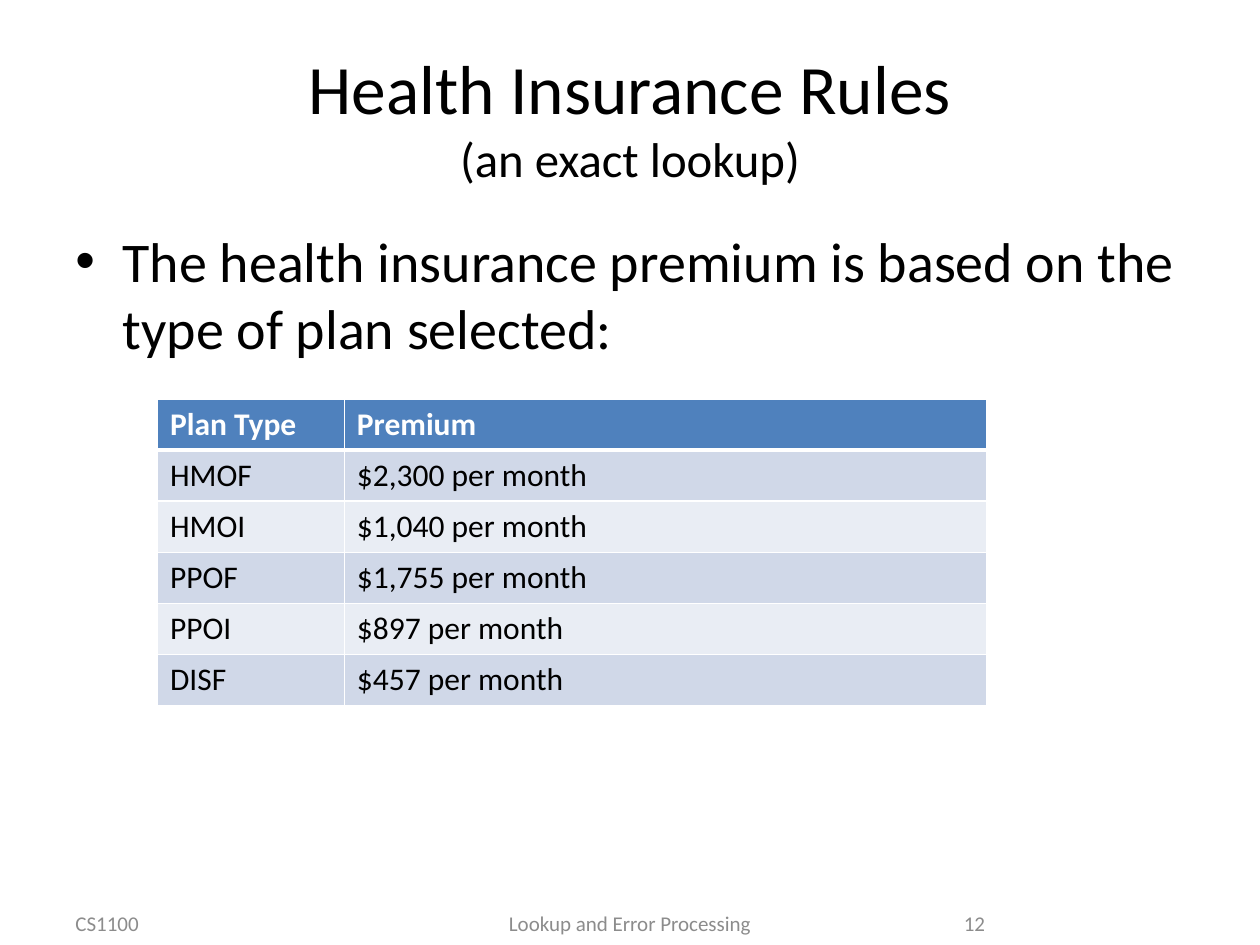
from pptx import Presentation
from pptx.dml.color import RGBColor
from pptx.enum.text import MSO_ANCHOR, PP_ALIGN
from pptx.oxml.ns import qn
from pptx.util import Pt
from lxml.etree import SubElement

BLACK, WHITE, GRAY, BLUE = "000000", "FFFFFF", "8C8C8C", "4F81BD"
BANDS = ("D0D8E8", "E9EDF4")
PLANS = [
    ("Plan Type", "Premium"),
    ("HMOF", "$2,300 per month"),
    ("HMOI", "$1,040 per month"),
    ("PPOF", "$1,755 per month"),
    ("PPOI", "$897 per month"),
    ("DISF", "$457 per month"),
]
FOOTER = [
    ("CS1100", 36, 168, PP_ALIGN.LEFT),
    ("Lookup and Error Processing", 246, 228, PP_ALIGN.CENTER),
    ("12", 516, 54, PP_ALIGN.RIGHT),
]


def color(code):
    """Turn a hex string into a colour."""
    return RGBColor.from_string(code)


def style(font, size, code, bold=False):
    """Set the font from a dict of format values."""
    for key, value in {"name": "Calibri", "size": Pt(size), "bold": bold}.items():
        setattr(font, key, value)
    font.color.rgb = color(code)


def add_text(slide, box, lines, code, align=PP_ALIGN.LEFT, anchor=MSO_ANCHOR.MIDDLE):
    """Add a text box of (text, size) lines and return its paragraph."""
    frame = slide.shapes.add_textbox(*map(Pt, box)).text_frame
    frame.word_wrap = True
    frame.vertical_anchor = anchor
    para = frame.paragraphs[0]
    para.alignment = align
    for place, (text, size) in enumerate(lines):
        if place:
            para.add_line_break()
        run = para.add_run()
        run.text = text
        style(run.font, size, code)
    return para


def add_bullet(para, indent):
    """Give a paragraph a hanging round bullet."""
    props = para._p.get_or_add_pPr()
    props.set("marL", str(Pt(indent)))
    props.set("indent", str(-Pt(indent)))
    SubElement(props, qn("a:buFont"), typeface="Arial")
    SubElement(props, qn("a:buChar"), char="•")


def add_edges(cell, widths):
    """Draw white cell borders from a dict of side widths."""
    props = cell._tc.get_or_add_tcPr()
    for place, (side, width) in enumerate(widths.items()):
        line = props.makeelement(qn(f"a:ln{side}"), {"w": str(Pt(width))})
        fill = SubElement(line, qn("a:solidFill"))
        SubElement(fill, qn("a:srgbClr"), val=WHITE)
        props.insert(place, line)


def add_table(slide, left, top, widths, height, rows):
    """Add a banded table with a bold header row."""
    size = (sum(widths), height * len(rows))
    shape = slide.shapes.add_table(len(rows), len(widths), *map(Pt, (left, top, *size)))
    table = shape.table
    for column, width in zip(table.columns, widths):
        column.width = Pt(width)
    for r, values in enumerate(rows):
        table.rows[r].height = Pt(height)
        head = r == 0
        for c, value in enumerate(values):
            cell = table.cell(r, c)
            cell.text = value
            style(cell.text_frame.paragraphs[0].runs[0].font, 18, WHITE if head else BLACK, head)
            cell.fill.solid()
            cell.fill.fore_color.rgb = color(BLUE if head else BANDS[(r - 1) % 2])
            add_edges(cell, {"L": 1, "R": 1, "T": 3 if r == 1 else 1, "B": 3 if head else 1})


def main():
    """Build the slide and save it."""
    deck = Presentation()
    deck.slide_width, deck.slide_height = Pt(720), Pt(540)
    slide = deck.slides.add_slide(deck.slide_layouts[6])
    title = [("Health Insurance Rules", 39.6), ("(an exact lookup)", 27.9)]
    add_text(slide, (36, 21.6, 648, 90), title, BLACK, PP_ALIGN.CENTER)
    body = [("The health insurance premium is based on the type of plan selected:", 32)]
    para = add_text(slide, (36, 126, 648, 102), body, BLACK, anchor=MSO_ANCHOR.TOP)
    add_bullet(para, 27)
    add_table(slide, 90, 228, (106.8, 367.2), 29.2, PLANS)
    for text, left, width, align in FOOTER:
        add_text(slide, (left, 516, width, 22.5), [(text, 12)], GRAY, align)
    deck.save("out.pptx")


if __name__ == "__main__":
    main()
